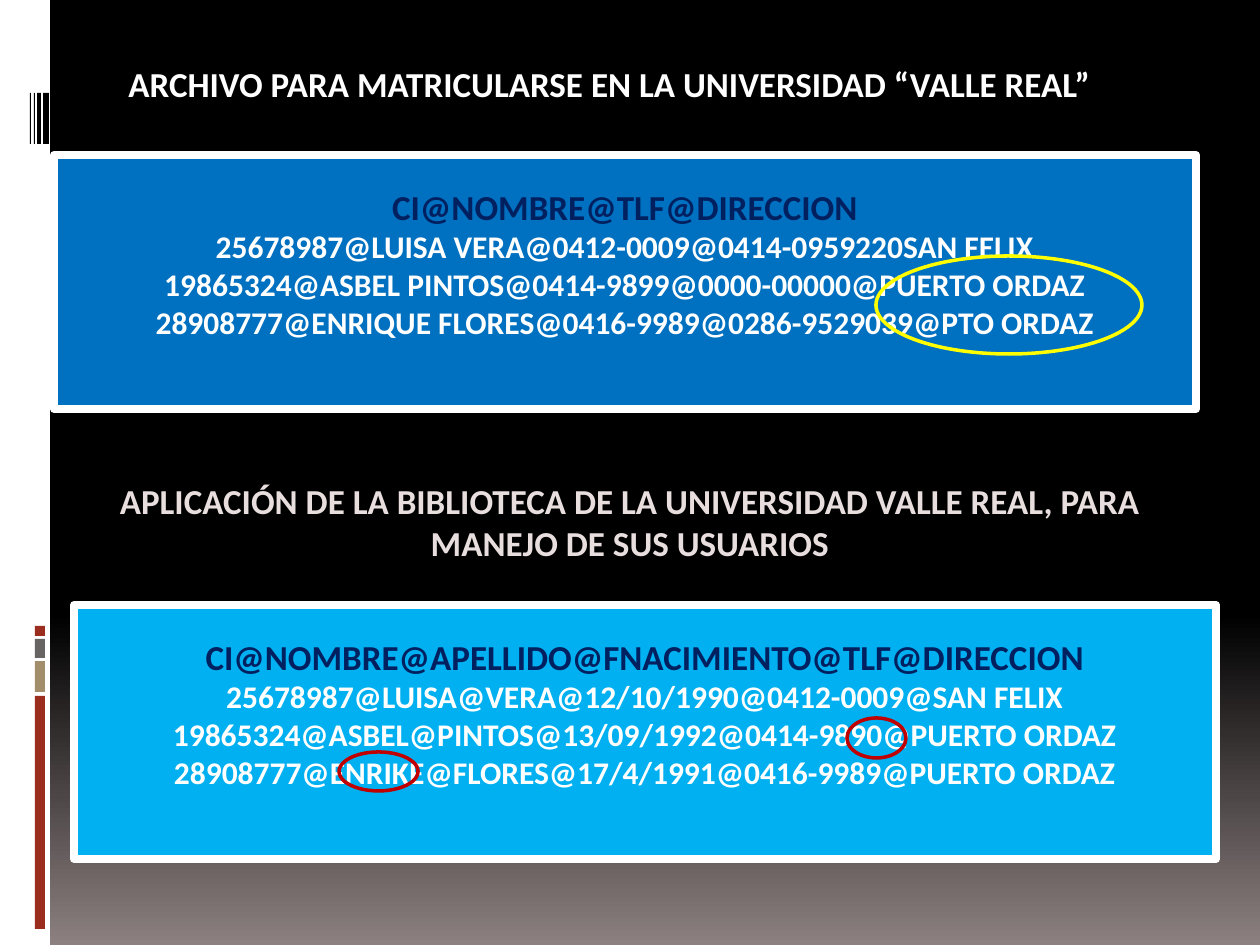
import pptx
import pptx.util
import pptx.dml.color
import pptx.enum.shapes
import pptx.enum.text
from dataclasses import dataclass

PIXELS_PER_INCH = 126
EMU_PER_PIXEL = 914400 / PIXELS_PER_INCH


@dataclass(frozen=True)
class Theme:
    font: str = "Calibri"
    heading_size: int = 20
    record_size: int = 18
    frame_width: float = 4.5
    mark_width: float = 2
    black: str = "000000"
    white: str = "FFFFFF"
    fade: str = "8C8080"
    pale: str = "E8DEDE"
    red: str = "9B2D1F"
    sand: str = "A28E6A"
    gray: str = "696464"
    navy: str = "002060"
    blue: str = "0070C0"
    sky: str = "00B0F0"
    mark_red: str = "C00000"
    mark_yellow: str = "FFFF00"


THEME = Theme()


def px(length):
    return pptx.util.Emu(round(length * EMU_PER_PIXEL))


def rgb(color):
    return pptx.dml.color.RGBColor.from_string(color)


def paint_background(slide):
    fill = slide.background.fill
    fill.gradient()
    fill.gradient_angle = 270
    stops = ((0.65, THEME.black), (1, THEME.fade))
    for stop, (position, color) in zip(fill.gradient_stops, stops):
        stop.position = position
        stop.color.rgb = rgb(color)


def add_shape(slide, kind, box, fill=None, line=None, line_width=0):
    shape = slide.shapes.add_shape(kind, *map(px, box))
    shape.shadow.inherit = False
    if fill:
        shape.fill.solid()
        shape.fill.fore_color.rgb = rgb(fill)
    else:
        shape.fill.background()
    if line:
        shape.line.color.rgb = rgb(line)
        shape.line.width = pptx.util.Pt(line_width)
    else:
        shape.line.fill.background()
    return shape


def add_rectangle(slide, box, fill, **line_format):
    kind = pptx.enum.shapes.MSO_SHAPE.RECTANGLE
    return add_shape(slide, kind, box, fill, **line_format)


def add_mark(slide, box, color):
    kind = pptx.enum.shapes.MSO_SHAPE.OVAL
    add_shape(slide, kind, box, line=color, line_width=THEME.mark_width)


def write_paragraph(paragraph, text, *, size, color):
    paragraph.alignment = pptx.enum.text.PP_ALIGN.CENTER
    run = paragraph.add_run()
    run.text = text
    run.font.name = THEME.font
    run.font.size = pptx.util.Pt(size)
    run.font.bold = True
    run.font.color.rgb = rgb(color)


def add_heading(slide, box, text, color):
    frame = slide.shapes.add_textbox(*map(px, box)).text_frame
    frame.word_wrap = True
    write_paragraph(frame.paragraphs[0], text, size=THEME.heading_size, color=color)


def add_file_panel(slide, box, fill, fields, records):
    panel = add_rectangle(slide, box, fill, line=THEME.white, line_width=THEME.frame_width)
    frame = panel.text_frame
    frame.word_wrap = True
    frame.vertical_anchor = pptx.enum.text.MSO_ANCHOR.MIDDLE
    frame.margin_bottom = px(44)  # lifts the records above the middle
    write_paragraph(frame.paragraphs[0], fields, size=THEME.heading_size, color=THEME.navy)
    for record in records:
        write_paragraph(frame.add_paragraph(), record, size=THEME.record_size, color=THEME.white)


def add_side_strip(slide):
    add_rectangle(slide, (0, 0, 50, 945), THEME.white)
    # Coloured blocks: top, height
    blocks = ((696, 233, THEME.red), (661, 31, THEME.sand),
              (639, 19, THEME.gray), (626, 10, THEME.red))
    for top, height, color in blocks:
        add_rectangle(slide, (35, top, 10, height), color)
    # Black bars: left, width
    for left, width in ((43, 6), (37, 4), (34, 1), (30, 1)):
        add_rectangle(slide, (left, 93, width, 51), THEME.black)


def main():
    presentation = pptx.Presentation()
    presentation.slide_width = px(1260)
    presentation.slide_height = px(945)
    slide = presentation.slides.add_slide(presentation.slide_layouts[6])
    paint_background(slide)
    add_side_strip(slide)

    # Enrolment file
    add_file_panel(slide, (54, 155, 1142, 254), THEME.blue, "CI@NOMBRE@TLF@DIRECCION", (
        "25678987@LUISA VERA@0412-0009@0414-0959220SAN FELIX",
        "19865324@ASBEL PINTOS@0414-9899@0000-00000@PUERTO ORDAZ",
        "28908777@ENRIQUE FLORES@0416-9989@0286-9529039@PTO ORDAZ",
    ))
    add_heading(slide, (54, 56, 1111, 55),
                "ARCHIVO PARA MATRICULARSE EN LA UNIVERSIDAD “VALLE REAL”", THEME.white)

    # Library file
    add_file_panel(slide, (74, 605, 1142, 254), THEME.sky,
                   "CI@NOMBRE@APELLIDO@FNACIMIENTO@TLF@DIRECCION", (
        "25678987@LUISA@VERA@12/10/1990@0412-0009@SAN FELIX",
        "19865324@ASBEL@PINTOS@13/09/1992@0414-9890@PUERTO ORDAZ",
        "28908777@ENRIKE@FLORES@17/4/1991@0416-9989@PUERTO ORDAZ",
    ))
    add_heading(slide, (82, 473, 1096, 97),
                "APLICACIÓN DE LA BIBLIOTECA DE LA UNIVERSIDAD VALLE REAL, "
                "PARA MANEJO DE SUS USUARIOS", THEME.pale)

    # Marks around inconsistent data
    add_mark(slide, (847, 718, 59, 40), THEME.mark_red)
    add_mark(slide, (876, 256, 266, 98), THEME.mark_yellow)
    add_mark(slide, (339, 752, 79, 39), THEME.mark_red)

    presentation.save("out.pptx")


if __name__ == "__main__":
    main()
